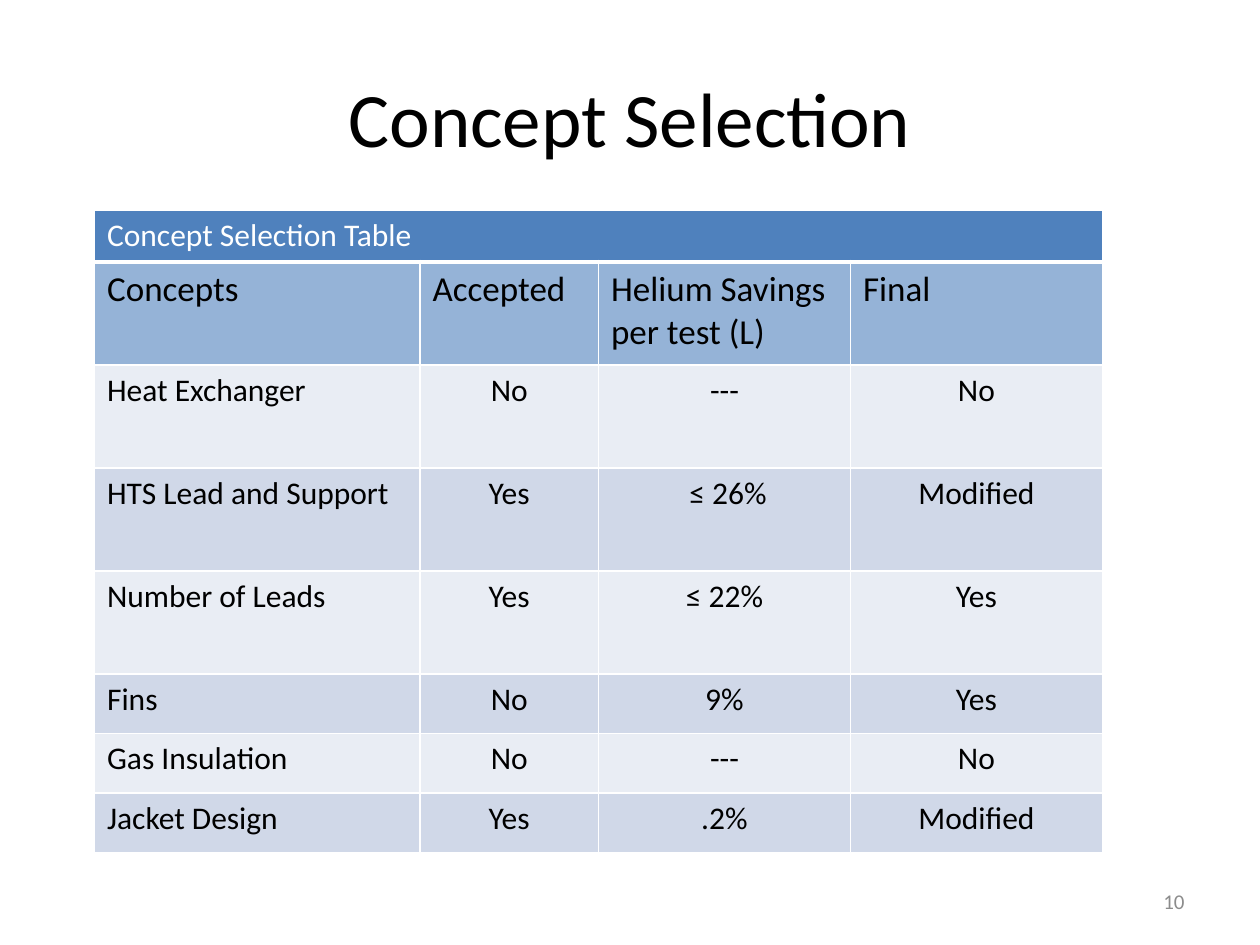
import dataclasses

import pptx
import pptx.dml.color
import pptx.enum.text
import pptx.oxml
import pptx.oxml.ns
import pptx.util

Pt = pptx.util.Pt
RGB = pptx.dml.color.RGBColor.from_string
ALIGN = pptx.enum.text.PP_ALIGN
ANCHOR = pptx.enum.text.MSO_ANCHOR


@dataclasses.dataclass(frozen=True)
class Theme:
    font: str = "Calibri"
    text: str = "000000"
    white: str = "FFFFFF"
    muted: str = "8C8C8C"
    banner: str = "4F81BD"
    heading: str = "95B3D7"
    bands: tuple = ("E9EDF4", "D0D8E8")
    title_size: int = 44
    heading_size: int = 20
    body_size: int = 18
    number_size: int = 12


theme = Theme()


def write(tf, text, size, color, align):
    tf.word_wrap = True
    p = tf.paragraphs[0]
    p.text = text
    p.alignment = align
    p.font.name = theme.font
    p.font.size = Pt(size)
    p.font.bold = False
    p.font.color.rgb = RGB(color)


def add_border(cell, side, width):
    cell._tc.get_or_add_tcPr().append(pptx.oxml.parse_xml(
        f'<a:ln{side} {pptx.oxml.ns.nsdecls("a")} w="{Pt(width)}">'
        f'<a:solidFill><a:srgbClr val="{theme.white}"/></a:solidFill></a:ln{side}>'))


prs = pptx.Presentation()
prs.slide_width, prs.slide_height = Pt(720), Pt(540)
s = prs.slides.add_slide(prs.slide_layouts[6])

# Title and slide number
labels = [
    ((36, 21.6, 648, 90), "Concept Selection", theme.title_size, theme.text, ALIGN.CENTER),
    ((516, 500.5, 168, 28.75), "10", theme.number_size, theme.muted, ALIGN.RIGHT),
]
for box, text, size, color, align in labels:
    tf = s.shapes.add_textbox(*map(Pt, box)).text_frame
    tf.vertical_anchor = ANCHOR.MIDDLE
    write(tf, text, size, color, align)

# Concept table
rows = [
    ("Concept Selection Table", "", "", ""),
    ("Concepts", "Accepted", "Helium Savings per test (L)", "Final"),
    ("Heat Exchanger", "No", "---", "No"),
    ("HTS Lead and Support", "Yes", " ≤ 26%", "Modified"),
    ("Number of Leads", "Yes", "≤ 22%", "Yes"),
    ("Fins", "No", "9%", "Yes"),
    ("Gas Insulation", "No", "---", "No"),
    ("Jacket Design", "Yes", ".2%", "Modified"),
]
col_widths = [186, 102, 144, 144]
row_heights = [29.5] + [58.85] * 4 + [34] * 3

table = s.shapes.add_table(len(rows), len(col_widths), Pt(54), Pt(120.25),
                           Pt(sum(col_widths)), Pt(sum(row_heights))).table
for column, width in zip(table.columns, col_widths):
    column.width = Pt(width)
for row, height in zip(table.rows, row_heights):
    row.height = Pt(height)
table.cell(0, 0).merge(table.cell(0, len(col_widths) - 1))

for i, row in enumerate(rows):
    size, color = theme.body_size, theme.text
    if i == 0:
        fill, color = theme.banner, theme.white
    elif i == 1:
        fill, size = theme.heading, theme.heading_size
    else:
        fill = theme.bands[i % 2]
    for j, text in enumerate(row):
        cell = table.cell(i, j)
        for side in "LRTB":
            add_border(cell, side, 3 if i == 0 and side == "B" else 1)
        cell.fill.solid()
        cell.fill.fore_color.rgb = RGB(fill)
        if not cell.is_spanned:
            align = ALIGN.CENTER if i > 1 and j > 0 else ALIGN.LEFT
            write(cell.text_frame, text, size, color, align)

prs.save("out.pptx")
